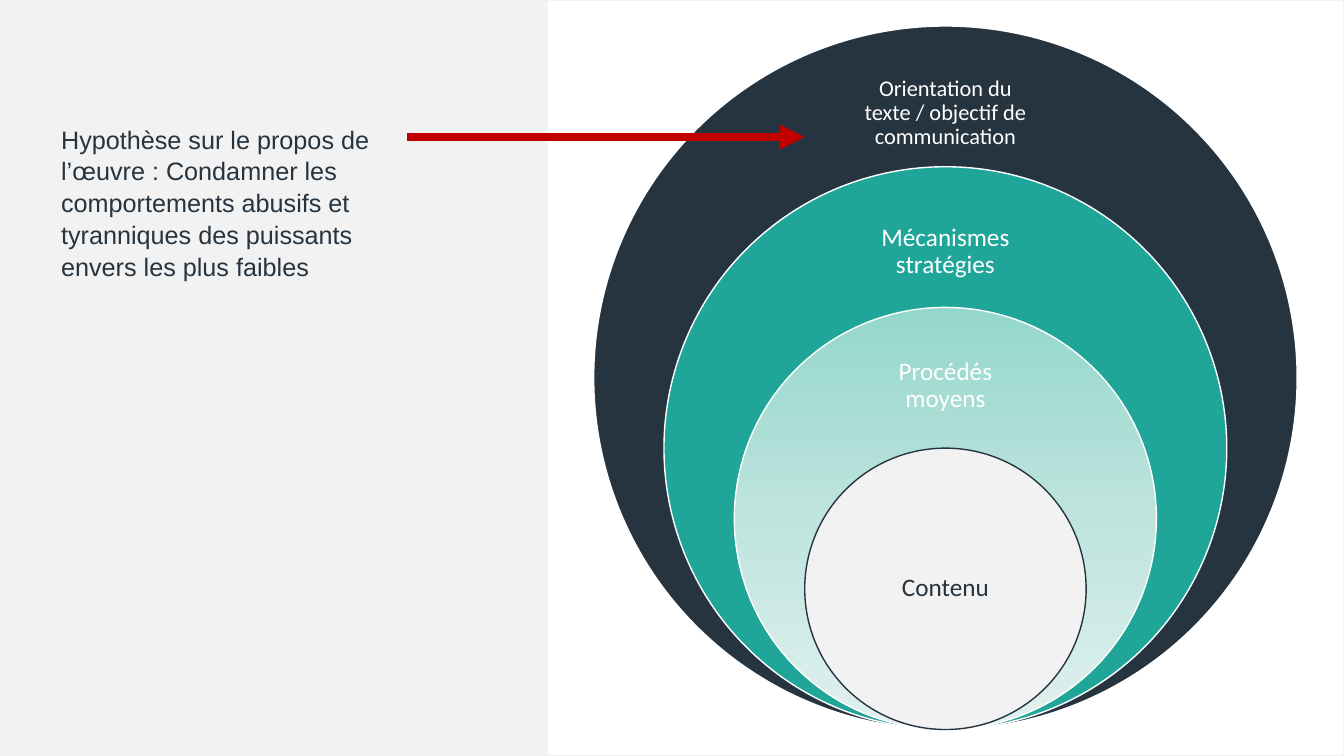
from copy import deepcopy

from lxml.etree import SubElement
from pptx import Presentation
from pptx.dml.color import RGBColor
from pptx.enum.shapes import MSO_CONNECTOR, MSO_SHAPE
from pptx.enum.text import MSO_ANCHOR, MSO_AUTO_SIZE, PP_ALIGN
from pptx.oxml.ns import qn
from pptx.util import Inches, Pt

COLS, ROWS = 160, 90
WHITE, PALE, DARK, TEAL, RED = "FFFFFF", "F2F2F2", "263440", "1FA699", "C00000"
FADE = ["94D7CC", "BFE4DE", "E0F1EE"]


def tint(code):
    return RGBColor.from_string(code)


def write(frame, text, font="Calibri", size=18, color=WHITE, align=PP_ALIGN.CENTER,
          anchor=MSO_ANCHOR.MIDDLE, space=0.9, inset=0.14, grow=False):
    frame.word_wrap = True
    frame.auto_size = MSO_AUTO_SIZE.SHAPE_TO_FIT_TEXT if grow else MSO_AUTO_SIZE.NONE
    frame.vertical_anchor = anchor
    if inset is not None:
        frame.margin_left = frame.margin_right = Inches(inset)
        frame.margin_top = frame.margin_bottom = Inches(inset)
    para = frame.paragraphs[0]
    para.text = text
    para.alignment = align
    para.line_spacing = space
    for run in para.runs:
        run.font.name = font
        run.font.size = Pt(size)
        run.font.color.rgb = tint(color)


class Board:
    def __init__(self, deck, back):
        self.cell_w = deck.slide_width / COLS
        self.cell_h = deck.slide_height / ROWS
        self.slide = deck.slides.add_slide(deck.slide_layouts[6])
        self.home = self.slide.shapes
        fill = self.slide.background.fill
        fill.solid()
        fill.fore_color.rgb = tint(back)

    def place(self, *cells):
        sides = self.cell_w, self.cell_h
        return [round(n * sides[i % 2]) for i, n in enumerate(cells)]

    def group(self):
        self.home = self.slide.shapes.add_group_shape().shapes

    def leave(self):
        self.home = self.slide.shapes

    def shape(self, kind, box, fill, line=None):
        form = self.home.add_shape(kind, *self.place(*box))
        form.shadow.inherit = False
        if isinstance(fill, list):
            self.fade(form, fill)
        else:
            form.fill.solid()
            form.fill.fore_color.rgb = tint(fill)
        if line:
            form.line.color.rgb = tint(line)
            form.line.width = Pt(1)
        else:
            form.line.fill.background()

    def fade(self, form, codes):
        form.fill.gradient()
        form.fill.gradient_angle = 270
        stops = form.element.find(".//" + qn("a:gsLst"))
        stops.append(deepcopy(stops[0]))
        for i, (stop, code) in enumerate(zip(form.fill.gradient_stops, codes)):
            stop.position = i / (len(codes) - 1)
            stop.color.rgb = tint(code)

    def text(self, box, words, **style):
        label = self.home.add_textbox(*self.place(*box))
        write(label.text_frame, words, **style)

    def arrow(self, start, end, color, width):
        line = self.home.add_connector(MSO_CONNECTOR.STRAIGHT, *self.place(*start, *end))
        line.line.color.rgb = tint(color)
        line.line.width = Pt(width)
        SubElement(line.line._get_or_add_ln(), qn("a:tailEnd"), type="triangle")
        SubElement(line.element.spPr, qn("a:effectLst"))


def main():
    deck = Presentation()
    deck.slide_width, deck.slide_height = Inches(40 / 3), Inches(7.5)
    board = Board(deck, PALE)
    board.shape(MSO_SHAPE.RECTANGLE, (65.2, 0.1, 94.7, 89.8), WHITE)

    mid, base, step, wide = 112.55, 86.85, 16.75, 23.4
    rings = [
        ("Orientation du texte / objectif de communication", DARK, WHITE, 7.2, 12.6,
         dict(size=16, inset=0.12)),
        ("Mécanismes\nstratégies", TEAL, WHITE, 23.9, 12.1, {}),
        ("Procédés\nmoyens", FADE, WHITE, 40.3, 11.3, {}),
        ("Contenu", PALE, DARK, 61.7, 16.8, dict(color=DARK)),
    ]
    board.group()
    for i, (words, fill, line, top, high, style) in enumerate(rings):
        size = step * (5 - i)
        board.shape(MSO_SHAPE.OVAL, (mid - size / 2, base - size, size, size), fill, line)
        board.text((mid - wide / 2, top, wide, high), words, **style)
    board.leave()

    board.text((6.1, 14, 43.9, 19.4),
               "Hypothèse sur le propos de l’œuvre : Condamner les comportements abusifs "
               "et tyranniques des puissants envers les plus faibles",
               font="Arial", color=DARK, align=PP_ALIGN.LEFT, anchor=MSO_ANCHOR.TOP,
               space=1.05, inset=None, grow=True)
    board.arrow((48.5, 16.3), (95.8, 16.3), RED, 6)
    deck.save("out.pptx")


if __name__ == "__main__":
    main()
